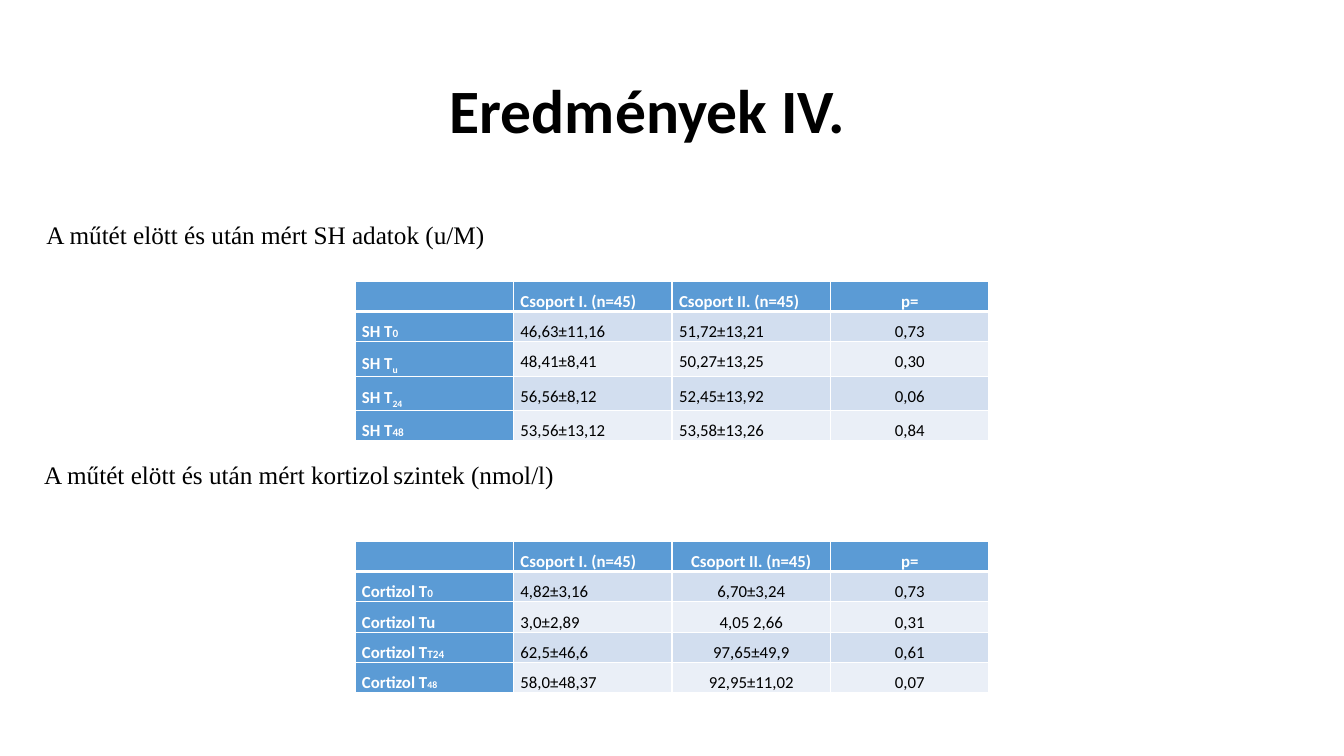
from lxml import etree
from pptx import Presentation
from pptx.dml.color import RGBColor
from pptx.enum import text
from pptx.oxml import ns
from pptx.util import Inches, Pt

COLORS = {"header": "5B9BD5", "odd": "D2DEEF", "even": "EAEFF7", "white": "FFFFFF", "black": "000000"}
ALIGN = text.PP_ALIGN
LEFT, WIDTH, ROW_HEIGHT = 3.52, 6.29, 0.3


def add_span(para, words, color, **formats):
    span = para.add_run()
    span.text = words
    span.font.color.rgb = RGBColor.from_string(COLORS[color])
    for name, value in formats.items():
        setattr(span.font, name, value)
    return span


def add_border(cell, side, points):
    line = etree.SubElement(cell._tc.get_or_add_tcPr(), ns.qn(f"a:{side}"), w=str(Pt(points)))
    fill = etree.SubElement(line, ns.qn("a:solidFill"))
    etree.SubElement(fill, ns.qn("a:srgbClr"), val=COLORS["white"])


deck = Presentation()
deck.slide_width, deck.slide_height = Inches(13.33), Inches(7.5)
page = deck.slides.add_slide(deck.slide_layouts[5])

title = page.shapes.title
title_place = {"left": 0.92, "top": 0.4, "width": 11.5, "height": 1.45}
for name, value in title_place.items():
    setattr(title, name, Inches(value))
title.text_frame.vertical_anchor = text.MSO_ANCHOR.MIDDLE
para = title.text_frame.paragraphs[0]
para.alignment = ALIGN.LEFT
para.line_spacing = 0.9
para._p.get_or_add_pPr().set("marL", str(Inches(3.44)))
add_span(para, "Eredmények IV.", "black", size=Pt(44), name="Calibri", bold=True)

captions = [
    (0.29, 1.98, 4.64, 0.51, [(" A műtét elött és után mért SH adatok (u/M)", 18)]),
    (0.31, 4.36, 5.31, 0.56, [("A műtét elött és után mért kortizol", 18), (" ", 10.5), ("szintek (nmol/l)", 18)]),
]
for left, top, width, height, parts in captions:
    box = page.shapes.add_textbox(Inches(left), Inches(top), Inches(width), Inches(height))
    box.text_frame.word_wrap = False
    box.text_frame.auto_size = text.MSO_AUTO_SIZE.SHAPE_TO_FIT_TEXT
    para = box.text_frame.paragraphs[0]
    para.alignment, para.line_spacing, para.space_after = ALIGN.CENTER, 1.5, Pt(8)
    for words, size in parts:
        add_span(para, words, "black", size=Pt(size), name="Times New Roman")

HEADINGS = ["", "Csoport I. (n=45)", "Csoport II. (n=45)", "p="]
SUBSCRIPT = {"size": 12, "baseline": "-25000"}
SMALL, TINY = {"size": 8}, {"size": 7}
results = [
    ("SH T", 2.79, ALIGN.JUSTIFY, [
        ("0", SMALL, "46,63±11,16", "51,72±13,21", "0,73"),
        ("u", SUBSCRIPT, "48,41±8,41", "50,27±13,25", "0,30"),
        ("24", SUBSCRIPT, "56,56±8,12", "52,45±13,92", "0,06"),
        ("48", SMALL, "53,56±13,12", "53,58±13,26", "0,84"),
    ]),
    ("Cortizol T", 5.37, ALIGN.CENTER, [
        ("0", SMALL, "4,82±3,16", "6,70±3,24", "0,73"),
        ("u", {"size": 12}, "3,0±2,89", "4,05 2,66", "0,31"),
        ("T24", SMALL, "62,5±46,6", "97,65±49,9", "0,61"),
        ("48", TINY, "58,0±48,37", "92,95±11,02", "0,07"),
    ]),
]
for label, top, second_group, measures in results:
    rows = [HEADINGS] + [[label, *values] for _, _, *values in measures]
    frame = page.shapes.add_table(len(rows), len(HEADINGS), Inches(LEFT), Inches(top),
                                  Inches(WIDTH), Inches(ROW_HEIGHT * len(rows)))
    table = frame.table
    aligns = [ALIGN.JUSTIFY, ALIGN.JUSTIFY, second_group, ALIGN.CENTER]
    for r, row in enumerate(rows):
        for c, words in enumerate(row):
            cell = table.cell(r, c)
            cell.margin_left = cell.margin_right = Inches(0.07)
            cell.margin_top = cell.margin_bottom = 0
            for side in ("lnL", "lnR", "lnT", "lnB"):
                thick = (r, side) in ((0, "lnB"), (1, "lnT"))
                add_border(cell, side, 3 if thick else 1)
            strong = r == 0 or c == 0
            shade = "header" if strong else "odd" if r % 2 else "even"
            cell.fill.solid()
            cell.fill.fore_color.rgb = RGBColor.from_string(COLORS[shade])
            para = cell.text_frame.paragraphs[0]
            para.alignment, para.line_spacing = aligns[c], 1.5
            color = "white" if strong else "black"
            add_span(para, words, color, size=Pt(12), name="Calibri", bold=strong)
            if r and c == 0:
                index, style = measures[r - 1][:2]
                span = add_span(para, index, color, size=Pt(style["size"]), name="Calibri", bold=True)
                if "baseline" in style:
                    span.font._element.set("baseline", style["baseline"])

deck.save("out.pptx")
